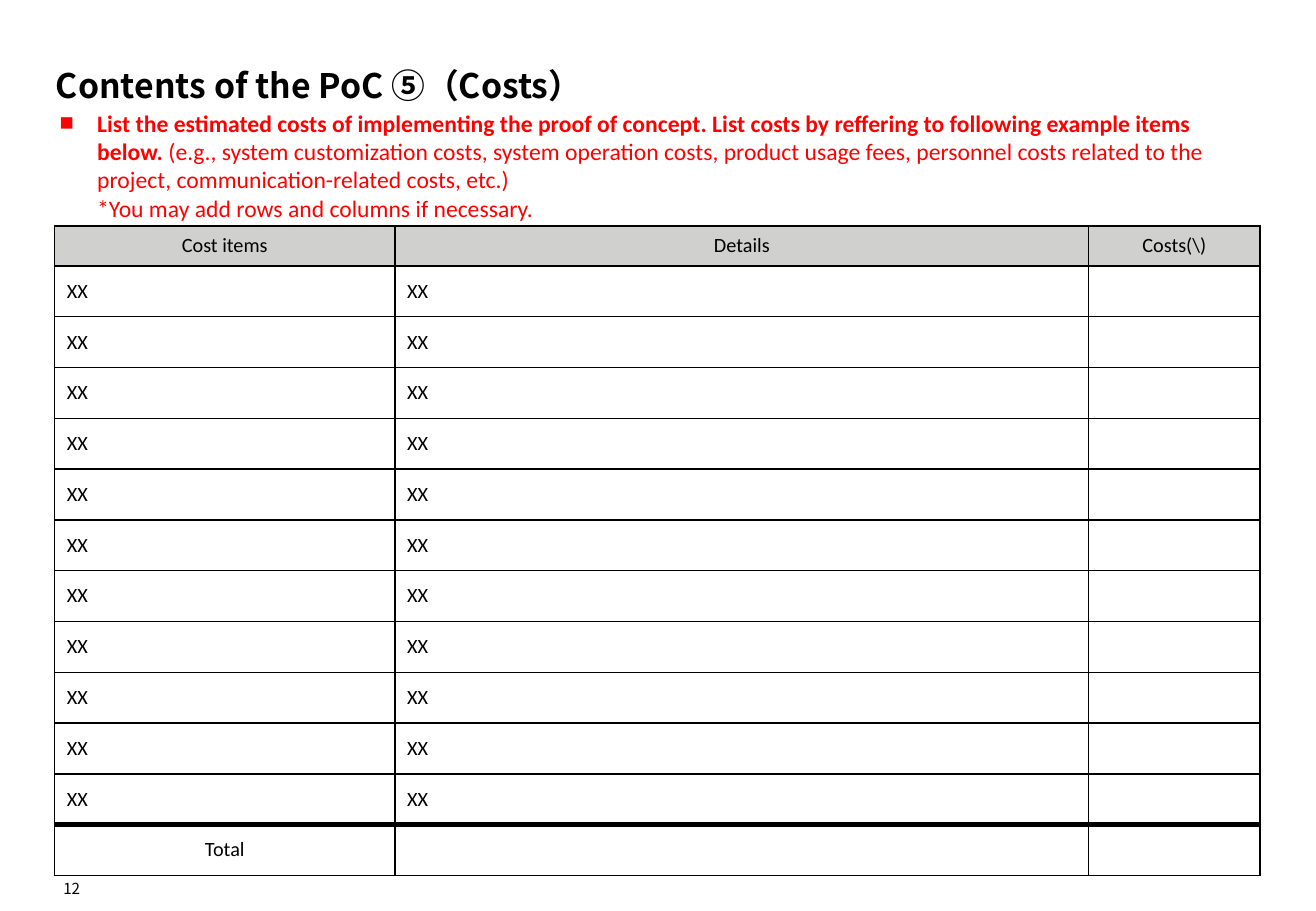
import dataclasses

import lxml.etree
import pptx
import pptx.dml.color
import pptx.enum.text
import pptx.oxml.ns
import pptx.util

Inches = pptx.util.Inches
ALIGN = pptx.enum.text.PP_ALIGN
ANCHOR = pptx.enum.text.MSO_ANCHOR


@dataclasses.dataclass(frozen=True)
class Theme:
    ink: str = "000000"
    red: str = "FF0000"
    gray: str = "D0D0CE"
    paper: str = "FFFFFF"
    head: str = "Noto Sans CJK JP"
    body: str = "Calibri"
    title: int = 20
    note: int = 14
    cell: int = 12
    page: int = 9
    thin: int = 1
    thick: int = 3


THEME = Theme()


def add(parent, tag, **attrs):
    """Append a drawing element."""
    return lxml.etree.SubElement(parent, pptx.oxml.ns.qn(tag), **attrs)


def style(run, face, size, color, bold=False):
    font = run.font
    font.name, font.size, font.bold = face, pptx.util.Pt(size), bold
    font.color.rgb = pptx.dml.color.RGBColor.from_string(color)
    add(font._element, "a:ea", typeface=face)


def place(shape, box, anchor, inset, wrap=True):
    shape.left, shape.top, shape.width, shape.height = map(Inches, box)
    frame = shape.text_frame
    frame.auto_size = pptx.enum.text.MSO_AUTO_SIZE.NONE
    frame.word_wrap, frame.vertical_anchor = wrap, anchor
    frame.margin_left = frame.margin_right = Inches(inset)
    frame.margin_top = frame.margin_bottom = Inches(inset)
    return frame.paragraphs[0]


def add_title(slide, box, text):
    para = place(slide.shapes.title, box, ANCHOR.BOTTOM, 0)
    para.text, para.alignment = text, ALIGN.LEFT
    style(para.runs[0], THEME.head, THEME.title, THEME.ink, True)


def add_note(slide, box, lead, *lines):
    """Bulleted instruction: bold lead, then plain lines."""
    para = place(slide.shapes.add_textbox(0, 0, 0, 0), box, ANCHOR.MIDDLE, 0.04)
    props = para._p.get_or_add_pPr()
    props.set("marL", str(Inches(0.31)))
    props.set("indent", str(-Inches(0.31)))
    add(props, "a:buFont", typeface="Arial")
    add(props, "a:buChar", char="■")
    para.text = lead + "\v".join(lines)
    first = para.runs[0]
    first.text = lead
    # Split the first line so that only the lead is bold
    rest = para.add_run()
    rest.text = lines[0]
    first._r.addnext(rest._r)
    for run in para.runs:
        style(run, THEME.body, THEME.note, THEME.red, run._r is first._r)


def fill_cell(cell, text, fill, center, top, base):
    props = cell._tc.get_or_add_tcPr()
    sides = dict(L=THEME.thin, R=THEME.thin, T=top, B=base)
    for side, width in sides.items():
        line = add(props, f"a:ln{side}", w=str(pptx.util.Pt(width)))
        add(add(line, "a:solidFill"), "a:srgbClr", val=THEME.ink)
    cell.fill.solid()
    cell.fill.fore_color.rgb = pptx.dml.color.RGBColor.from_string(fill)
    cell.vertical_anchor = ANCHOR.MIDDLE
    para = cell.text_frame.paragraphs[0]
    para.text = text
    para.alignment = ALIGN.CENTER if center else ALIGN.LEFT
    for run in para.runs:
        style(run, THEME.body, THEME.cell, THEME.ink)


def add_costs(slide, box, widths, rows, top=0.33):
    """Cost table: gray header, items, and a total under a thick rule."""
    last = len(rows) - 1
    frame = slide.shapes.add_table(len(rows), len(widths), *map(Inches, box))
    table = frame.table
    for col, width in zip(table.columns, widths):
        col.width = Inches(width)
    for i, texts in enumerate(rows):
        table.rows[i].height = Inches((box[3] - top) / last if i else top)
        for j, text in enumerate(texts):
            fill_cell(
                table.cell(i, j), text,
                fill=THEME.paper if i else THEME.gray,
                center=i in (0, last),
                top=THEME.thick if i == last else THEME.thin,
                base=THEME.thick if i == last - 1 else THEME.thin,
            )


def add_page(slide, box, text):
    shape = slide.shapes.add_textbox(0, 0, 0, 0)
    para = place(shape, box, ANCHOR.BOTTOM, 0, wrap=False)
    para.text, para.alignment = text, ALIGN.RIGHT
    style(para.runs[0], THEME.head, THEME.page, THEME.ink)


def main():
    deck = pptx.Presentation()
    deck.slide_width, deck.slide_height = Inches(10.83), Inches(7.5)
    slide = deck.slides.add_slide(deck.slide_layouts[5])

    # Heading and instruction
    add_title(slide, (0.46, 0.2, 9.92, 0.67), "Contents of the PoC ⑤（Costs）")
    add_note(
        slide, (0.45, 1.11, 9.92, 0.5),
        "List the estimated costs of implementing the proof of concept. "
        "List costs by reffering to following example items below.",
        " (e.g., system customization costs, system operation costs, "
        "product usage fees, personnel costs related to the project, "
        "communication-related costs, etc.)",
        "*You may add rows and columns if necessary.",
    )

    # Cost table
    rows = [
        ("Cost items", "Details", "Costs(\\)"),
        *[("XX", "XX", "")] * 11,
        ("Total", "", ""),
    ]
    add_costs(slide, (0.45, 1.86, 9.92, 5.35), (2.8, 5.71, 1.41), rows)

    # Page number
    add_page(slide, (0.46, 7.2, 0.2, 0.19), "12")
    deck.save("out.pptx")


if __name__ == "__main__":
    main()
